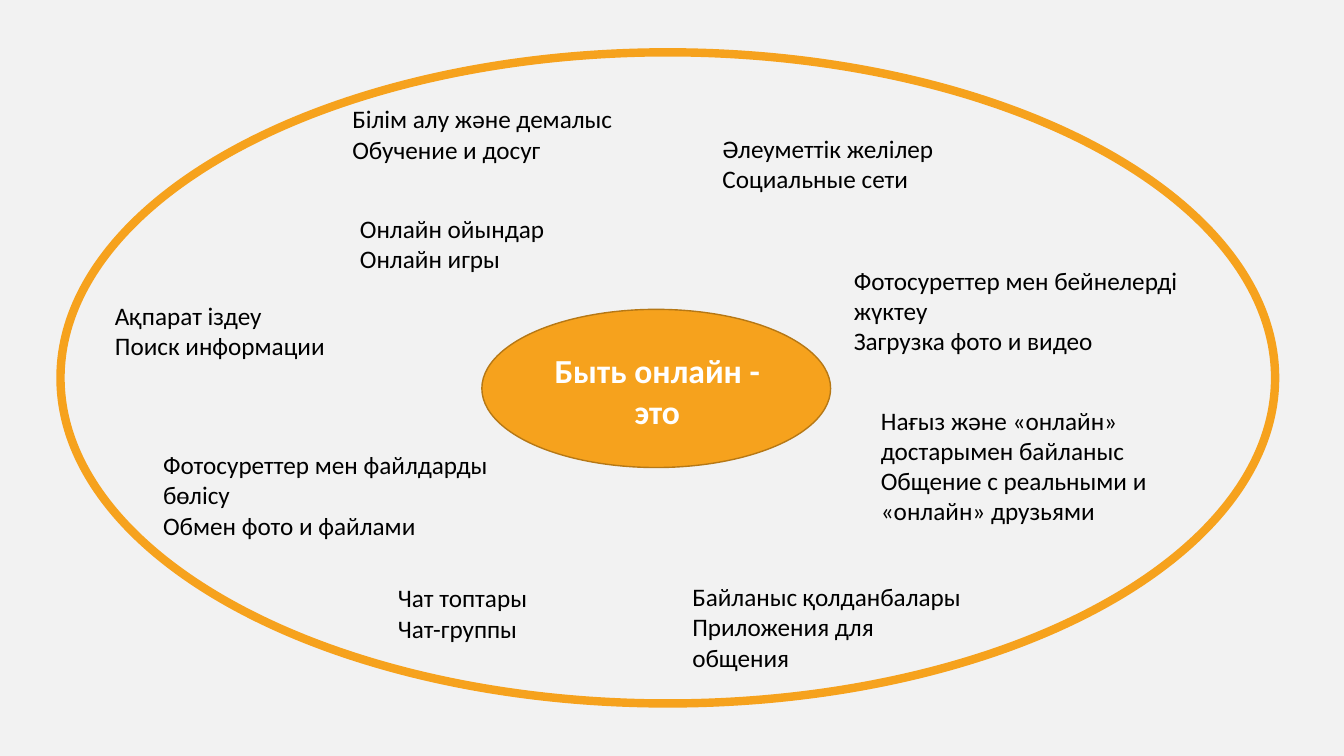
from dataclasses import dataclass

from pptx import Presentation
from pptx.dml.color import RGBColor as Rgb
from pptx.enum.shapes import MSO_SHAPE as Kind
from pptx.enum.text import MSO_ANCHOR as Anchor, MSO_AUTO_SIZE as Fit, PP_ALIGN as Align
from pptx.util import Pt


@dataclass(frozen=True)
class Theme:
    font: str = "Calibri"
    back: Rgb = Rgb.from_string("F2F2F2")
    main: Rgb = Rgb.from_string("F6A21D")
    edge: Rgb = Rgb.from_string("B67815")
    ink: Rgb = Rgb.from_string("000000")
    white: Rgb = Rgb.from_string("FFFFFF")
    head: int = 24
    body: int = 18
    line: float = 21.6  # height of one body line
    pad: float = 8      # space above and below the lines


def apply(item, form):
    for name, value in form.items():
        setattr(item, name, value)


class Deck:
    def __init__(self, theme):
        self.theme = theme
        self.show = Presentation()
        apply(self.show, {"slide_width": Pt(960), "slide_height": Pt(540)})
        self.slide = self.show.slides.add_slide(self.show.slide_layouts[5])
        fill = self.slide.background.fill
        fill.solid()
        fill.fore_color.rgb = theme.back

    def paint(self, shape, fill, edge, width):
        if fill is None:
            shape.fill.background()
        else:
            shape.fill.solid()
            shape.fill.fore_color.rgb = fill
        shape.line.color.rgb = edge
        shape.line.width = Pt(width)

    def oval(self, box, fill, edge, width):
        shape = self.slide.shapes.add_shape(Kind.OVAL, *map(Pt, box))
        shape.shadow.inherit = False
        self.paint(shape, fill, edge, width)

    def label(self, frame, lines, size, color, **form):
        frame.text = "\n".join(lines)
        for para in frame.paragraphs:
            apply(para, form)
            for run in para.runs:
                apply(run.font, {"name": self.theme.font, "size": Pt(size)})
                run.font.color.rgb = color

    def title(self, box, text):
        look = self.theme
        shape = self.slide.shapes.title
        apply(shape, dict(zip(("left", "top", "width", "height"), map(Pt, box))))
        self.paint(shape, look.main, look.main, 0.75)
        frame = shape.text_frame
        apply(frame, {"word_wrap": True, "auto_size": Fit.NONE,
                      "vertical_anchor": Anchor.MIDDLE})
        self.label(frame, [text], look.head, look.white, alignment=Align.CENTER)
        frame.paragraphs[0].runs[0].font.bold = True
        # Bring the title in front of the ovals
        self.slide.shapes.element.append(shape.element)

    def note(self, left, top, width, rows, *lines):
        look = self.theme
        box = left, top, width, look.pad + look.line * rows
        frame = self.slide.shapes.add_textbox(*map(Pt, box)).text_frame
        apply(frame, {"word_wrap": True, "auto_size": Fit.SHAPE_TO_FIT_TEXT})
        self.label(frame, lines, look.body, look.ink, alignment=Align.LEFT)


# Left, top, width, rows of text, then Kazakh and Russian wording
NOTES = [
    (622.1, 285.8, 241.2, 4, "Нағыз және «онлайн» достарымен байланыс",
     "Общение с реальными и «онлайн» друзьями"),
    (244.6, 70.6, 300.2, 2, "Білім алу және демалыс", "Обучение и досуг"),
    (250, 149, 213.8, 2, "Онлайн ойындар", "Онлайн игры"),
    (75, 211, 227.5, 2, "Ақпарат іздеу", "Поиск информации"),
    (602.8, 185.8, 292.3, 3, "Фотосуреттер мен бейнелерді жүктеу",
     "Загрузка фото и видео"),
    (109.4, 317.5, 270, 3, "Фотосуреттер мен файлдарды бөлісу",
     "Обмен фото и файлами"),
    (277.2, 412.6, 175.7, 2, "Чат топтары", "Чат-группы"),
    (509, 91.4, 226.8, 2, "Әлеуметтік желілер", "Социальные сети"),
    (487.4, 411.8, 215.3, 3, "Байланыс қолданбалары", "Приложения для общения"),
]


def main():
    look = Theme()
    deck = Deck(look)

    # Outer ring and centre
    deck.oval((43.2, 37.4, 867.6, 465.1), None, look.main, 6)
    deck.oval((344.2, 221, 249.1, 113), look.main, look.edge, 1)
    deck.title((373, 246.2, 193, 65.5), "Быть онлайн - это")

    # Online activities
    for note in NOTES:
        deck.note(*note)

    deck.show.save("out.pptx")


if __name__ == "__main__":
    main()
